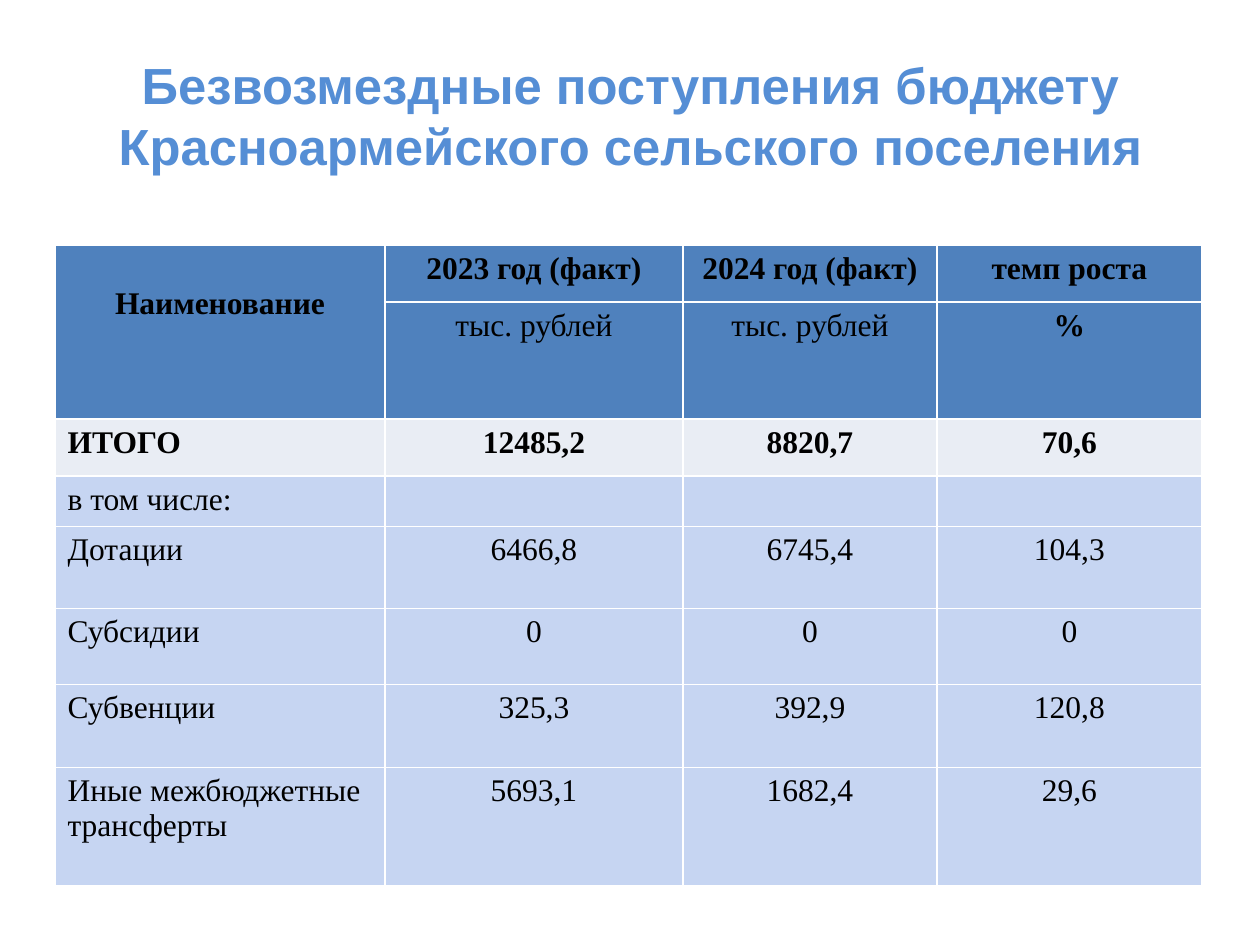
from lxml.etree import SubElement
from pptx import Presentation
from pptx.dml.color import RGBColor
from pptx.enum.text import MSO_ANCHOR, PP_ALIGN
from pptx.oxml.ns import qn
from pptx.util import Pt

PX = 914400 // 126
COLORS = {"title": "558ED5", "text": "000000", "header": "4F81BD",
          "total": "E9EDF4", "body": "C6D5F2", "border": "FFFFFF"}
TITLE = "Безвозмездные поступления бюджету Красноармейского сельского поселения"
COLUMN_WIDTHS = [330, 298, 254, 265]
ROWS = [
    (57, "header", ["Наименование", "2023 год (факт)", "2024 год (факт)", "темп роста"]),
    (117, "header", ["", "тыс. рублей", "тыс. рублей", "%"]),
    (57, "total", ["ИТОГО", "12485,2", "8820,7", "70,6"]),
    (48, "body", ["в том числе:", "", "", ""]),
    (82, "body", ["Дотации", "6466,8", "6745,4", "104,3"]),
    (76, "body", ["Субсидии", "0", "0", "0"]),
    (83, "body", ["Субвенции", "325,3", "392,9", "120,8"]),
    (118, "body", ["Иные межбюджетные трансферты", "5693,1", "1682,4", "29,6"]),
]
BOLD_ROWS = (0, 2)


def px(*lengths):
    return [length * PX for length in lengths]


def write(frame, text, size=18, font="Times New Roman", color="text", bold=False,
          align=PP_ALIGN.CENTER):
    paragraph = frame.paragraphs[0]
    paragraph.alignment = align
    if not text:
        SubElement(paragraph._p, qn("a:endParaRPr"), sz="1200")
        return
    run = paragraph.add_run()
    run.text = text
    run.font.size = Pt(size)
    run.font.name = font
    run.font.bold = bold
    run.font.color.rgb = RGBColor.from_string(COLORS[color])


def paint(cell, color):
    properties = cell._tc.get_or_add_tcPr()
    for side in ("lnL", "lnR", "lnT", "lnB"):
        line = SubElement(properties, qn(f"a:{side}"), w=str(Pt(1)))
        fill = SubElement(line, qn("a:solidFill"))
        SubElement(fill, qn("a:srgbClr"), val=COLORS["border"])
    cell.fill.solid()
    cell.fill.fore_color.rgb = RGBColor.from_string(COLORS[color])


deck = Presentation()
deck.slide_width, deck.slide_height = px(1260, 945)
slide = deck.slides.add_slide(deck.slide_layouts[6])

heading = slide.shapes.add_textbox(*px(64, 45, 1134, 139)).text_frame
heading.word_wrap = True
heading.vertical_anchor = MSO_ANCHOR.MIDDLE
write(heading, TITLE, size=29, font="Arial", color="title", bold=True)

heights = [height for height, _, _ in ROWS]
budget = slide.shapes.add_table(len(ROWS), len(COLUMN_WIDTHS),
                                *px(55, 245, sum(COLUMN_WIDTHS), sum(heights))).table
for column, width in zip(budget.columns, px(*COLUMN_WIDTHS)):
    column.width = width
for row, height in zip(budget.rows, px(*heights)):
    row.height = height

for r, (_, band, values) in enumerate(ROWS):
    for c, value in enumerate(values):
        cell = budget.cell(r, c)
        paint(cell, band)
        is_label = c == 0 and band != "header"
        write(cell.text_frame, value, bold=r in BOLD_ROWS or value == "%",
              align=PP_ALIGN.LEFT if is_label else PP_ALIGN.CENTER)

name_header = budget.cell(0, 0)
name_header.merge(budget.cell(1, 0))
name_header.margin_top = 41 * PX

deck.save("out.pptx")
